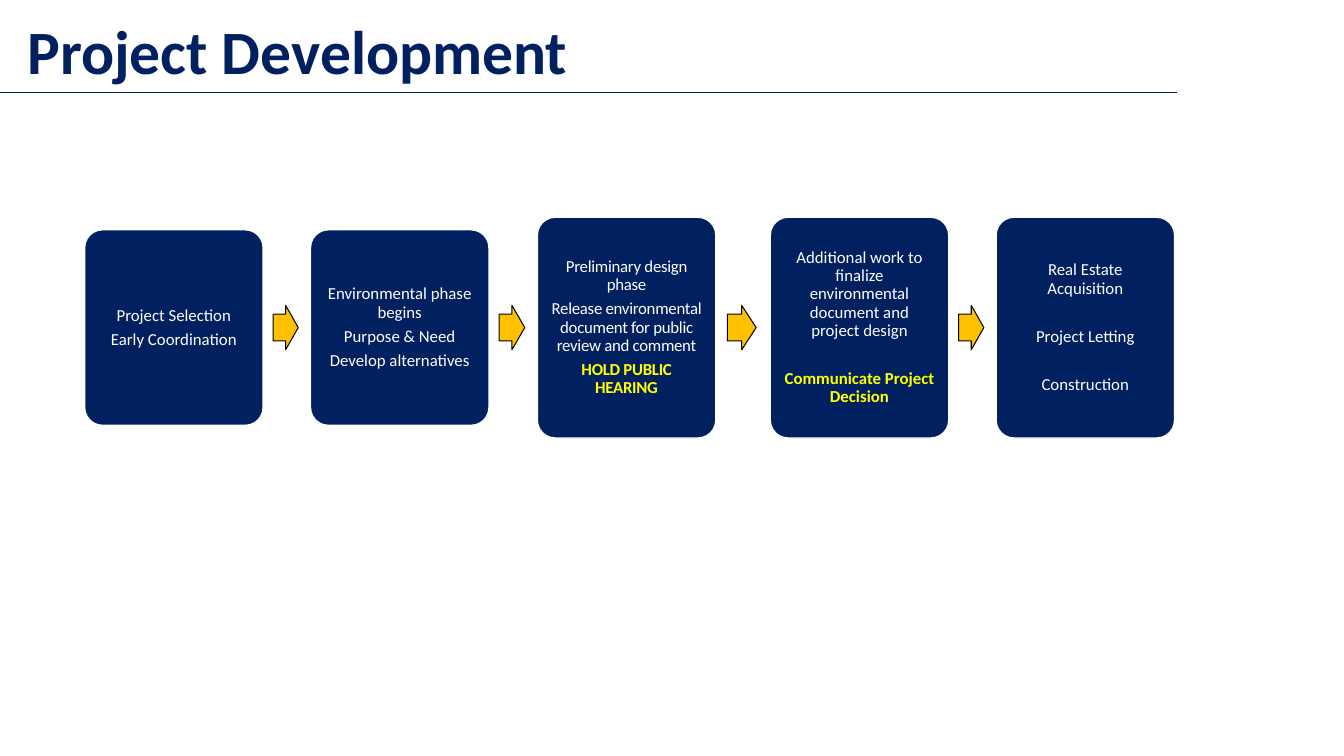
from itertools import pairwise

from lxml.etree import SubElement
from pptx import Presentation
from pptx.dml.color import RGBColor
from pptx.enum.shapes import MSO_CONNECTOR, MSO_SHAPE
from pptx.enum.text import MSO_ANCHOR, MSO_AUTO_SIZE, PP_ALIGN
from pptx.oxml.ns import qn
from pptx.util import Inches, Pt

NAVY = RGBColor(0x00, 0x20, 0x60)
GOLD = RGBColor(0xFF, 0xC0, 0x00)
YELLOW = RGBColor(0xFF, 0xFF, 0x00)
WHITE = RGBColor(0xFF, 0xFF, 0xFF)
BLACK = RGBColor(0x00, 0x00, 0x00)

MIDDLE = 3.25
BOX_WIDTH = 1.77
ARROW_HEIGHT = 0.44
TIGHT, LOOSE = 4.2, 21.4  # points between paragraphs
HIGHLIGHTS = {"HOLD PUBLIC HEARING", "Communicate Project Decision"}

# left, height, paragraph gap, letter spacing in 1/100 pt, paragraphs
STAGES = [
    (0.84, 1.94, TIGHT, 0, ["Project Selection", "Early Coordination"]),
    (3.08, 1.94, TIGHT, 0, ["Environmental phase begins", "Purpose & Need",
                            "Develop alternatives"]),
    (5.33, 2.19, TIGHT, -20, ["Preliminary design phase",
                              "Release environmental document for public review and comment",
                              "HOLD PUBLIC HEARING"]),
    (7.64, 2.19, LOOSE, 0, ["Additional work to finalize environmental document and project design",
                            "Communicate Project Decision"]),
    (9.88, 2.19, LOOSE, 0, ["Real Estate Acquisition", "Project Letting", "Construction"]),
]


def set_all(obj, values):
    for name, value in values.items():
        setattr(obj, name, value)


def style_font(font, size, color, bold=False):
    set_all(font, {"name": "Calibri", "size": Pt(size), "bold": bold})
    font.color.rgb = color


def add_title(s, text):
    title = s.shapes.title
    set_all(title, {"left": Inches(0.17), "top": Inches(0),
                    "width": Inches(13), "height": Inches(0.92)})
    tf = title.text_frame
    tf.text = text
    set_all(tf, {"vertical_anchor": MSO_ANCHOR.BOTTOM, "auto_size": MSO_AUTO_SIZE.NONE})
    p = tf.paragraphs[0]
    set_all(p, {"alignment": PP_ALIGN.LEFT, "line_spacing": 0.9})
    style_font(p.runs[0].font, 44, NAVY, True)


def add_rule(s, width, y):
    rule = s.shapes.add_connector(MSO_CONNECTOR.STRAIGHT, Inches(0), Inches(y),
                                  Inches(width), Inches(y))
    rule.line.color.rgb = NAVY
    rule.line.width = Pt(0.5)
    SubElement(rule._element.spPr, qn("a:effectLst"))


def add_centred_shape(s, kind, left, width, height, fill, line, line_width):
    """Add a preset shape centred on the middle line of the process."""
    sp = s.shapes.add_shape(kind, Inches(left), Inches(MIDDLE - height / 2),
                            Inches(width), Inches(height))
    sp.shadow.inherit = False
    sp.fill.solid()
    sp.fill.fore_color.rgb = fill
    sp.line.color.rgb = line
    sp.line.width = Pt(line_width)
    return sp


def add_stage(s, left, height, gap, letter_spacing, texts):
    sp = add_centred_shape(s, MSO_SHAPE.ROUNDED_RECTANGLE, left, BOX_WIDTH, height,
                           NAVY, WHITE, 1)
    sp.adjustments[0] = 0.1
    tf = sp.text_frame
    inset = Inches(0.09)
    set_all(tf, {"word_wrap": True, "vertical_anchor": MSO_ANCHOR.MIDDLE,
                 "margin_left": inset, "margin_right": inset,
                 "margin_top": inset, "margin_bottom": inset})
    for i, text in enumerate(texts):
        p = tf.add_paragraph() if i else tf.paragraphs[0]
        is_last = i == len(texts) - 1
        set_all(p, {"alignment": PP_ALIGN.CENTER, "line_spacing": 0.9,
                    "space_after": Pt(TIGHT if is_last else gap)})
        r = p.add_run()
        r.text = text
        highlighted = text in HIGHLIGHTS
        style_font(r.font, 12, YELLOW if highlighted else WHITE, highlighted)
        if letter_spacing:
            r._r.get_or_add_rPr().set("spc", str(letter_spacing))


def add_arrow(s, start, end):
    """Add an arrow that fills the central part of the gap between two stages."""
    gap = end - start
    arrow = add_centred_shape(s, MSO_SHAPE.RIGHT_ARROW, start + 0.21 * gap, 0.53 * gap,
                              ARROW_HEIGHT, GOLD, BLACK, 0.75)
    arrow.adjustments[0] = 0.6
    arrow.adjustments[1] = 0.5


def main():
    prs = Presentation()
    set_all(prs, {"slide_width": Inches(13.33), "slide_height": Inches(7.5)})
    s = prs.slides.add_slide(prs.slide_layouts[5])
    add_rule(s, 11.67, 0.92)
    add_title(s, "Project Development")
    for stage in STAGES:
        add_stage(s, *stage)
    for before, after in pairwise(STAGES):
        add_arrow(s, before[0] + BOX_WIDTH, after[0])
    prs.save("out.pptx")


if __name__ == "__main__":
    main()
